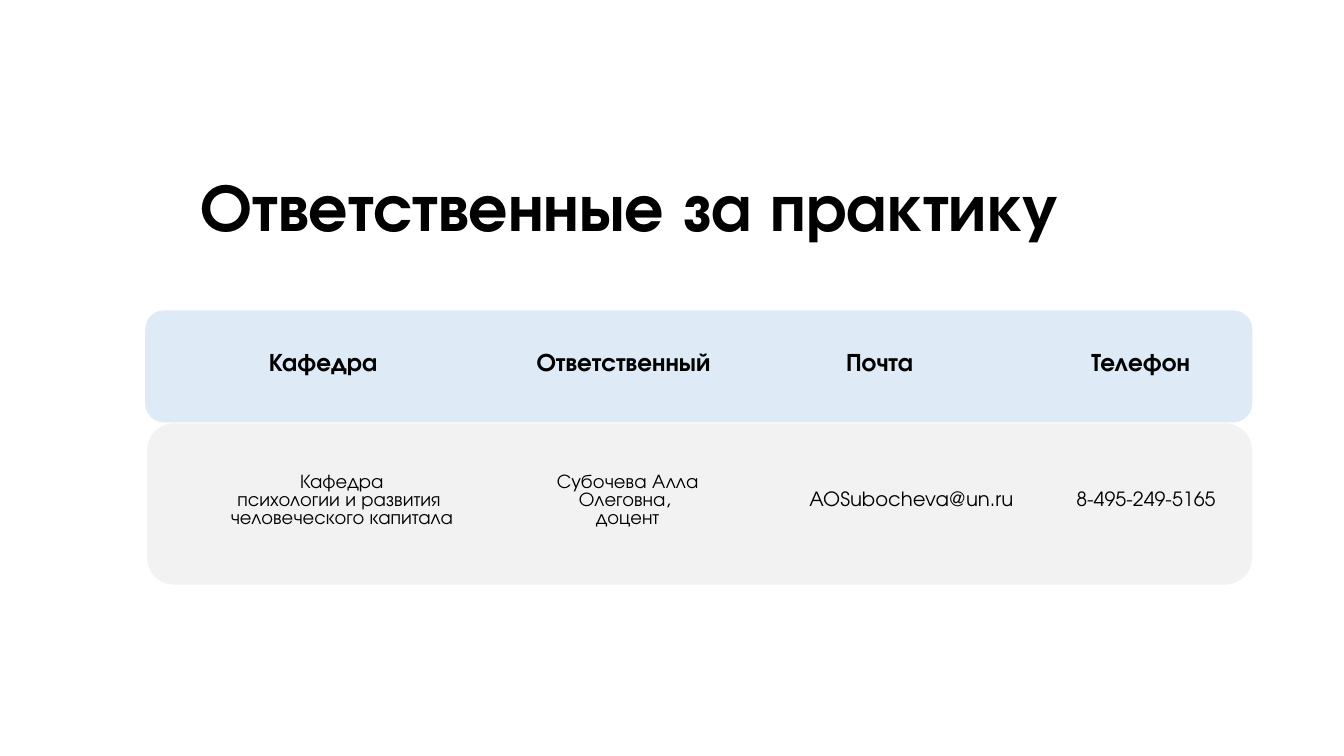
from dataclasses import dataclass

from lxml import etree
from pptx import Presentation
from pptx import util as u
from pptx.dml.color import RGBColor
from pptx.enum import shapes, text
from pptx.oxml import ns

FONT = "TeX Gyre Adventor"
COLORS = {"text": "000000", "header": "DEEBF7", "body": "F2F2F2"}


@dataclass
class Panel:
    left: float
    top: float
    width: float
    height: float
    color: str


@dataclass
class Grid:
    left: float
    top: float
    widths: list[float]
    heights: list[float]
    size: int = 14
    bold: bool = False
    cells: tuple[str, ...] = ()  # first row, the rest stays empty
    indents: tuple[float, ...] = ()  # extra left margins of the first row


PANELS = [
    Panel(1.46, 4.2, 10.96, 1.6, "body"),
    Panel(1.44, 3.08, 10.98, 1.11, "header"),
]
GRIDS = [
    Grid(1.44, 3.27, [3.46, 2.57, 2.51, 2.67], [0.7, 1.27], 18, True,
         (" Кафедра", "Ответственный", "Почта", "Телефон"), (0, 0, 0, 0)),
    Grid(1.89, 3.4, [3.07, 2.41, 2.55, 2.3], [0.75]),
    Grid(1.62, 4.41, [3.54, 2.13, 3.09, 1.92], [1.12], 14, False,
         ("Кафедра\nпсихологии и развития \nчеловеческого капитала",
          "Субочева Алла Олеговна, \nдоцент",
          "AOSubocheva@un.ru", " 8-495-249-5165"), (0, 0, 0.41, 0)),
    Grid(1.61, 5.65, [3.18, 2.71, 2.71, 2.08], [0.43]),
]


def add_run(paragraph, content: str, size: int, bold: bool) -> None:
    run = paragraph.add_run()
    run.text = content
    run.font.name = FONT
    run.font.size = u.Pt(size)
    run.font.bold = bold
    run.font.color.rgb = RGBColor.from_string(COLORS["text"])


def add_panel(slide, panel: Panel) -> None:
    shape = slide.shapes.add_shape(
        shapes.MSO_SHAPE.ROUNDED_RECTANGLE,
        u.Inches(panel.left), u.Inches(panel.top),
        u.Inches(panel.width), u.Inches(panel.height))
    shape.shadow.inherit = False
    shape.fill.solid()
    shape.fill.fore_color.rgb = RGBColor.from_string(COLORS[panel.color])
    shape.line.fill.background()


def clear_cell(cell) -> None:
    """Remove the fill and all four borders."""
    cell.fill.background()
    properties = cell._tc.get_or_add_tcPr()
    for position, side in enumerate(("lnL", "lnR", "lnT", "lnB")):
        border = etree.Element(ns.qn(f"a:{side}"), w="0")
        etree.SubElement(border, ns.qn("a:noFill"))
        properties.insert(position, border)


def fill_cell(cell, content: str, indent: float, grid: Grid) -> None:
    cell.vertical_anchor = text.MSO_ANCHOR.MIDDLE
    cell.margin_left = u.Inches(0.1 + indent)
    cell.margin_right = cell.margin_top = cell.margin_bottom = u.Inches(0.1)
    frame = cell.text_frame
    for number, line in enumerate(content.split("\n")):
        paragraph = frame.add_paragraph() if number else frame.paragraphs[0]
        paragraph.alignment = text.PP_ALIGN.CENTER
        add_run(paragraph, line, grid.size, grid.bold)


def add_grid(slide, grid: Grid) -> None:
    table = slide.shapes.add_table(
        len(grid.heights), len(grid.widths),
        u.Inches(grid.left), u.Inches(grid.top),
        u.Inches(sum(grid.widths)), u.Inches(sum(grid.heights))).table
    table.first_row = table.horz_banding = False
    for column, width in zip(table.columns, grid.widths):
        column.width = u.Inches(width)
    for row, height in zip(table.rows, grid.heights):
        row.height = u.Inches(height)
    for cell in table.iter_cells():
        clear_cell(cell)
    for cell, content, indent in zip(table.iter_cells(), grid.cells, grid.indents):
        fill_cell(cell, content, indent, grid)


def add_title(slide, content: str) -> None:
    title = slide.shapes.title
    title.left, title.top = u.Inches(1.89), u.Inches(1.64)
    title.width, title.height = u.Inches(11.23), u.Inches(0.89)
    frame = title.text_frame
    frame.word_wrap = True
    frame.auto_size = text.MSO_AUTO_SIZE.NONE
    frame.vertical_anchor = text.MSO_ANCHOR.MIDDLE
    frame.margin_left = frame.margin_right = u.Inches(0.1)
    frame.margin_top = frame.margin_bottom = u.Inches(0.1)
    paragraph = frame.paragraphs[0]
    paragraph.alignment = text.PP_ALIGN.LEFT
    paragraph.line_spacing = 0.9
    add_run(paragraph, content, 48, True)


def main() -> None:
    presentation = Presentation()
    presentation.slide_width = u.Inches(13.33)
    presentation.slide_height = u.Inches(7.5)
    slide = presentation.slides.add_slide(presentation.slide_layouts[5])

    # Rounded backgrounds, heading, then the tables
    for panel in PANELS:
        add_panel(slide, panel)
    add_title(slide, "Ответственные за практику")
    for grid in GRIDS:
        add_grid(slide, grid)
    presentation.save("out.pptx")


if __name__ == "__main__":
    main()
